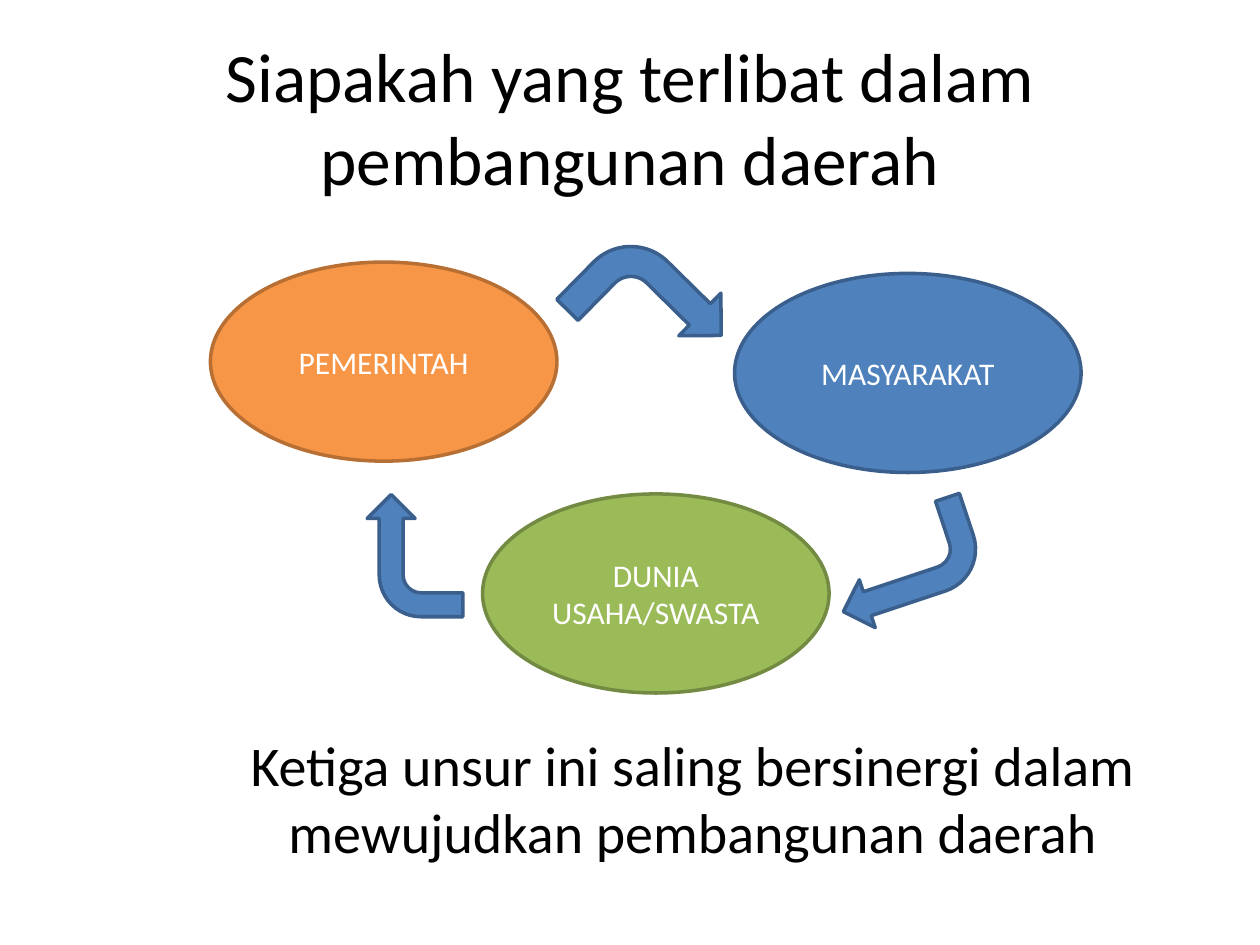
from pptx import Presentation
from pptx.dml.color import RGBColor
from pptx.enum.shapes import MSO_SHAPE as Shape
from pptx.enum.text import MSO_ANCHOR as Anchor, PP_ALIGN as Align
from pptx.util import Inches, Pt

COLORS = {
    "text": "000000", "label": "FFFFFF",
    "orange": "F79646", "orange_edge": "B76F34",
    "green": "9BBB59", "green_edge": "738A42",
    "blue": "4F81BD", "blue_edge": "3A5F8C",
}
OVAL_SIZE = (2.75, 1.58)


def color(name):
    return RGBColor.from_string(COLORS[name])


def write(box, text, size=18, fill="label", anchor=Anchor.MIDDLE):
    frame = box.text_frame
    frame.word_wrap = True
    frame.vertical_anchor = anchor
    para = frame.paragraphs[0]
    para.alignment = Align.CENTER
    span = para.add_run()
    span.text = text
    span.font.name = "Calibri"
    span.font.size = Pt(size)
    span.font.color.rgb = color(fill)


def add_figure(page, kind, left, top, width, height, hue):
    figure = page.shapes.add_shape(
        kind, Inches(left), Inches(top), Inches(width), Inches(height))
    figure.shadow.inherit = False
    figure.fill.solid()
    figure.fill.fore_color.rgb = color(hue)
    figure.line.color.rgb = color(f"{hue}_edge")
    figure.line.width = Pt(2)
    return figure


def add_actor(page, label, left, top, hue):
    write(add_figure(page, Shape.OVAL, left, top, *OVAL_SIZE, hue), label)


def add_bent_arrow(page, left, top, width, height, angle):
    arrow = add_figure(page, Shape.BENT_ARROW, left, top, width, height, "blue")
    arrow.rotation = angle


def add_title(page, text):
    title = page.shapes.title
    title.left, title.top = Inches(0.5), Inches(0.3)
    title.width, title.height = Inches(9), Inches(1.25)
    write(title, text, size=39.6, fill="text")


def add_conclusion(page, text):
    box = page.shapes.add_textbox(
        Inches(1), Inches(5.75), Inches(9), Inches(1.2))
    write(box, text, size=32, fill="text", anchor=Anchor.TOP)


def main():
    deck = Presentation()
    deck.slide_width, deck.slide_height = Inches(10), Inches(7.5)
    page = deck.slides.add_slide(deck.slide_layouts[5])

    add_title(page, "Siapakah yang terlibat dalam pembangunan daerah")
    add_conclusion(page, "Ketiga unsur ini saling bersinergi dalam "
                         "mewujudkan pembangunan daerah")

    # The three parties
    add_actor(page, "PEMERINTAH", 1.67, 2.08, "orange")
    add_actor(page, "DUNIA USAHA/SWASTA", 3.83, 3.92, "green")
    add_actor(page, "MASYARAKAT", 5.83, 2.17, "blue")

    # Clockwise cycle between them
    add_bent_arrow(page, 4.59, 1.96, 1.13, 0.95, 44.6)
    add_bent_arrow(page, 6.6, 4.08, 1.17, 0.8, 161.6)
    add_bent_arrow(page, 2.81, 4.03, 0.97, 0.76, 270)

    deck.save("out.pptx")


if __name__ == "__main__":
    main()
